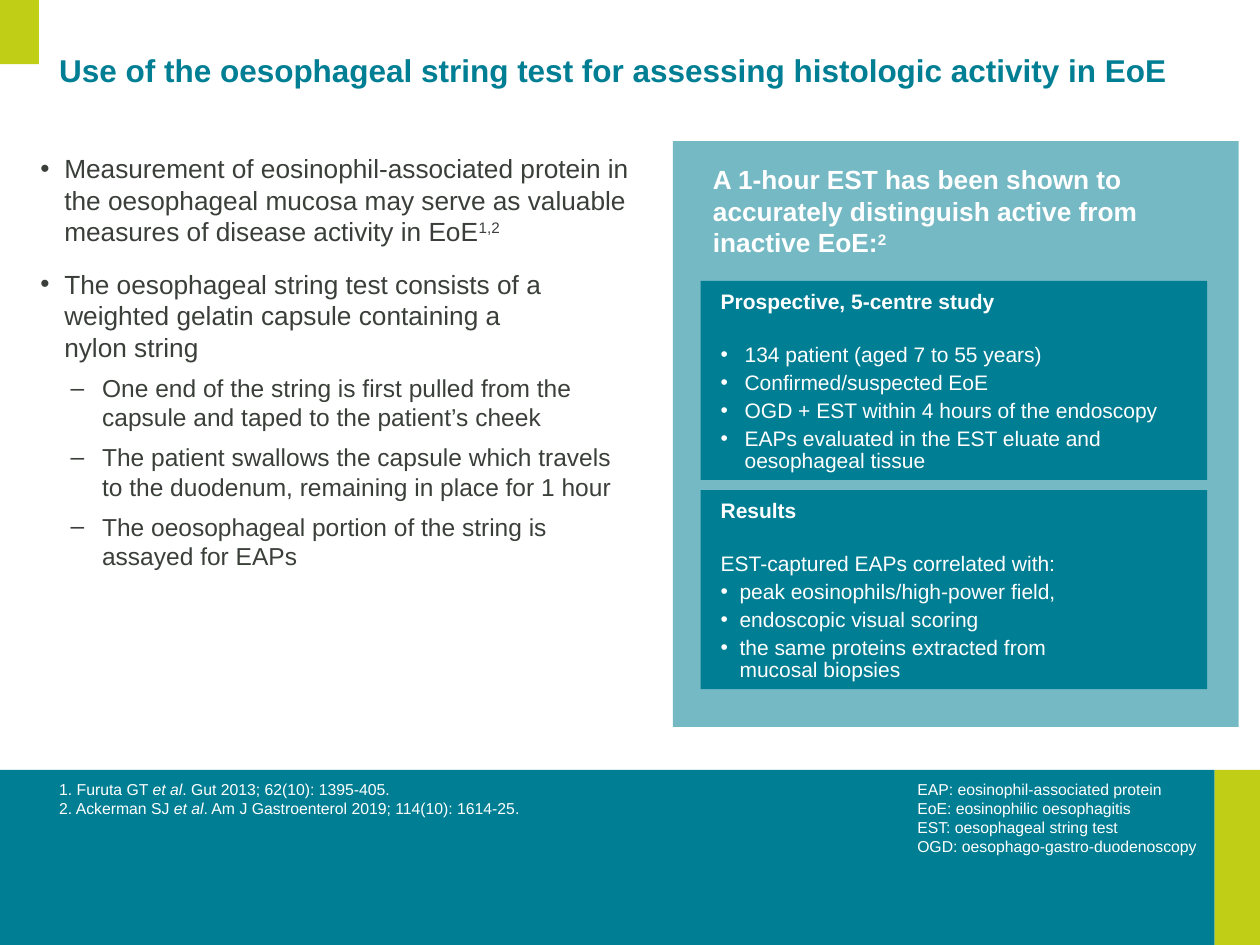
from lxml.etree import SubElement
from pptx import Presentation
from pptx.dml.color import RGBColor
from pptx.enum.shapes import MSO_SHAPE
from pptx.enum.text import MSO_ANCHOR, PP_ALIGN
from pptx.oxml.ns import qn
from pptx.util import Inches, Pt

TEAL = RGBColor(0x00, 0x7E, 0x93)
LIME = RGBColor(0xC0, 0xCF, 0x15)
INK = RGBColor(0x3A, 0x3F, 0x3A)
WHITE = RGBColor(0xFF, 0xFF, 0xFF)

# A paragraph is a string, or a list of (text, style) runs.
TITLE = "Use of the oesophageal string test for assessing histologic activity in EoE"
REFERENCES = [
    [("1. Furuta GT ", ""), ("et al", "italic"), (". Gut 2013; 62(10): 1395-405.", "")],
    [("2. Ackerman SJ ", ""), ("et al", "italic"),
     (". Am J Gastroenterol 2019; 114(10): 1614-25.", "")],
]
ABBREVIATIONS = [
    "EAP: eosinophil-associated protein",
    "EoE: eosinophilic oesophagitis",
    "EST: oesophageal string test",
    "OGD: oesophago-gastro-duodenoscopy",
]
KEY_POINTS = [
    [("Measurement of eosinophil-associated protein in \nthe oesophageal mucosa may serve "
      "as valuable measures of disease activity in EoE", ""), ("1,2", "super")],
    "The oesophageal string test consists of a weighted gelatin capsule containing a \n"
    "nylon string",
]
TEST_STEPS = [
    "One end of the string is first pulled from the capsule and taped to the patient’s cheek",
    "The patient swallows the capsule which travels \n"
    "to the duodenum, remaining in place for 1 hour",
    "The oeosophageal portion of the string is \nassayed for EAPs",
]
FINDING = [("A 1-hour EST has been shown to accurately distinguish active from inactive EoE:", ""),
           ("2", "super")]
CARDS = [
    {"heading": "Prospective, 5-centre study", "lead": None, "indent": 0.19,
     "points": ["134 patient (aged 7 to 55 years)",
                "Confirmed/suspected EoE",
                "OGD + EST within 4 hours of the endoscopy",
                "EAPs evaluated in the EST eluate and \noesophageal tissue"]},
    {"heading": "Results", "lead": "EST-captured EAPs correlated with:", "indent": 0.15,
     "points": ["peak eosinophils/high-power field,",
                "endoscopic visual scoring",
                "the same proteins extracted from \nmucosal biopsies"]},
]

FOOTER_TOP, FOOTER_HEIGHT, FOOTER_WIDTH = 6.11, 1.39, 9.64
CARD_LEFT, CARD_TOP, CARD_WIDTH, CARD_HEIGHT, CARD_GAP = 5.56, 2.23, 4.02, 1.58, 0.08
FOOTER_INSETS = (0, 0.08, 0.12, 0)
CARD_INSETS = (0.16, 0.08, 0.12, 0)


def add_block(slide, box, color, alpha=None):
    block = slide.shapes.add_shape(MSO_SHAPE.RECTANGLE, *map(Inches, box))
    block.shadow.inherit = False
    block.line.fill.background()
    block.fill.solid()
    block.fill.fore_color.rgb = color
    if alpha is not None:
        tint = block.fill._xPr.find(qn("a:solidFill"))[0]
        SubElement(tint, qn("a:alpha")).set("val", str(alpha * 1000))
    return block


def set_frame(shape, insets, anchor=MSO_ANCHOR.TOP):
    frame = shape.text_frame
    frame.word_wrap = True
    frame.vertical_anchor = anchor
    (frame.margin_left, frame.margin_top,
     frame.margin_right, frame.margin_bottom) = map(Inches, insets)
    return frame


def add_frame(slide, box, insets=(0, 0, 0, 0), anchor=MSO_ANCHOR.TOP):
    return set_frame(slide.shapes.add_textbox(*map(Inches, box)), insets, anchor)


def write(frame, text, *, size, color, bold=False, bullet=None, indent=0, hang=0,
          before=0, after=0, spacing=None, level=0):
    """Append one paragraph; the first one in a frame gets no space before."""
    first = not frame.paragraphs[0].runs
    paragraph = frame.paragraphs[0] if first else frame.add_paragraph()
    properties = paragraph._p.get_or_add_pPr()
    properties.set("marL", str(Inches(indent)))
    properties.set("indent", str(-Inches(hang)))
    if bullet:
        SubElement(properties, qn("a:buFont")).set("typeface", "Arial")
        SubElement(properties, qn("a:buChar")).set("char", bullet)
    paragraph.level = level
    paragraph.alignment = PP_ALIGN.LEFT
    paragraph.space_before = Pt(0 if first else before)
    paragraph.space_after = Pt(after)
    if spacing:
        paragraph.line_spacing = spacing

    for part, style in [(text, "")] if isinstance(text, str) else text:
        for number, line in enumerate(part.split("\n")):
            if number:
                paragraph.add_line_break()
            run = paragraph.add_run()
            run.text = line
            run.font.name = "Arial"
            run.font.size = Pt(size)
            run.font.bold = bold
            run.font.italic = style == "italic"
            run.font.color.rgb = color
            if style == "super":
                run.font._element.set("baseline", "30000")


def add_card(slide, top, heading, lead, indent, points):
    card = add_block(slide, (CARD_LEFT, top, CARD_WIDTH, CARD_HEIGHT), TEAL)
    frame = set_frame(card, CARD_INSETS)
    style = {"size": 12, "color": WHITE, "spacing": 0.9, "before": 3}
    write(frame, heading, bold=True, after=14.4, **style)
    if lead:
        write(frame, lead, **style)
    for point in points:
        write(frame, point, bullet="•", indent=indent, hang=indent, **style)


def main():
    deck = Presentation()
    deck.slide_width, deck.slide_height = Inches(10), Inches(7.5)
    slide = deck.slides.add_slide(deck.slide_layouts[6])

    add_block(slide, (0, FOOTER_TOP, FOOTER_WIDTH, FOOTER_HEIGHT), TEAL)
    add_block(slide, (FOOTER_WIDTH, FOOTER_TOP, 10 - FOOTER_WIDTH, FOOTER_HEIGHT), LIME)
    add_block(slide, (0, 0, 0.31, 0.51), LIME)
    add_block(slide, (5.34, 1.12, 4.49, 4.65), TEAL, alpha=54)

    title = add_frame(slide, (0.47, 0.16, 8.98, 0.64), anchor=MSO_ANCHOR.MIDDLE)
    write(title, TITLE, size=18, color=TEAL, bold=True, spacing=1.5)

    references = add_frame(slide, (0.47, FOOTER_TOP, 4.87, FOOTER_HEIGHT), FOOTER_INSETS)
    for reference in REFERENCES:
        write(references, reference, size=9, color=WHITE, indent=0.15, hang=0.15)

    body = add_frame(slide, (0.32, 1.21, 4.79, 4.98))
    for point in KEY_POINTS:
        write(body, point, size=15, color=INK, bullet="•", indent=0.19, hang=0.19, before=12)
    for step in TEST_STEPS:
        write(body, step, size=14, color=INK, bullet="–", indent=0.49, hang=0.25,
              before=6, level=1)

    abbreviations = add_frame(slide, (7.28, FOOTER_TOP, 2.35, FOOTER_HEIGHT), FOOTER_INSETS)
    for abbreviation in ABBREVIATIONS:
        write(abbreviations, abbreviation, size=9, color=WHITE)

    for row, card in enumerate(CARDS):
        add_card(slide, CARD_TOP + row * (CARD_HEIGHT + CARD_GAP), **card)

    finding = add_frame(slide, (CARD_LEFT, 1.25, 3.82, 0.86), (0.1, 0.05, 0.1, 0.05))
    write(finding, FINDING, size=15, color=WHITE, bold=True)

    deck.save("out.pptx")


if __name__ == "__main__":
    main()
